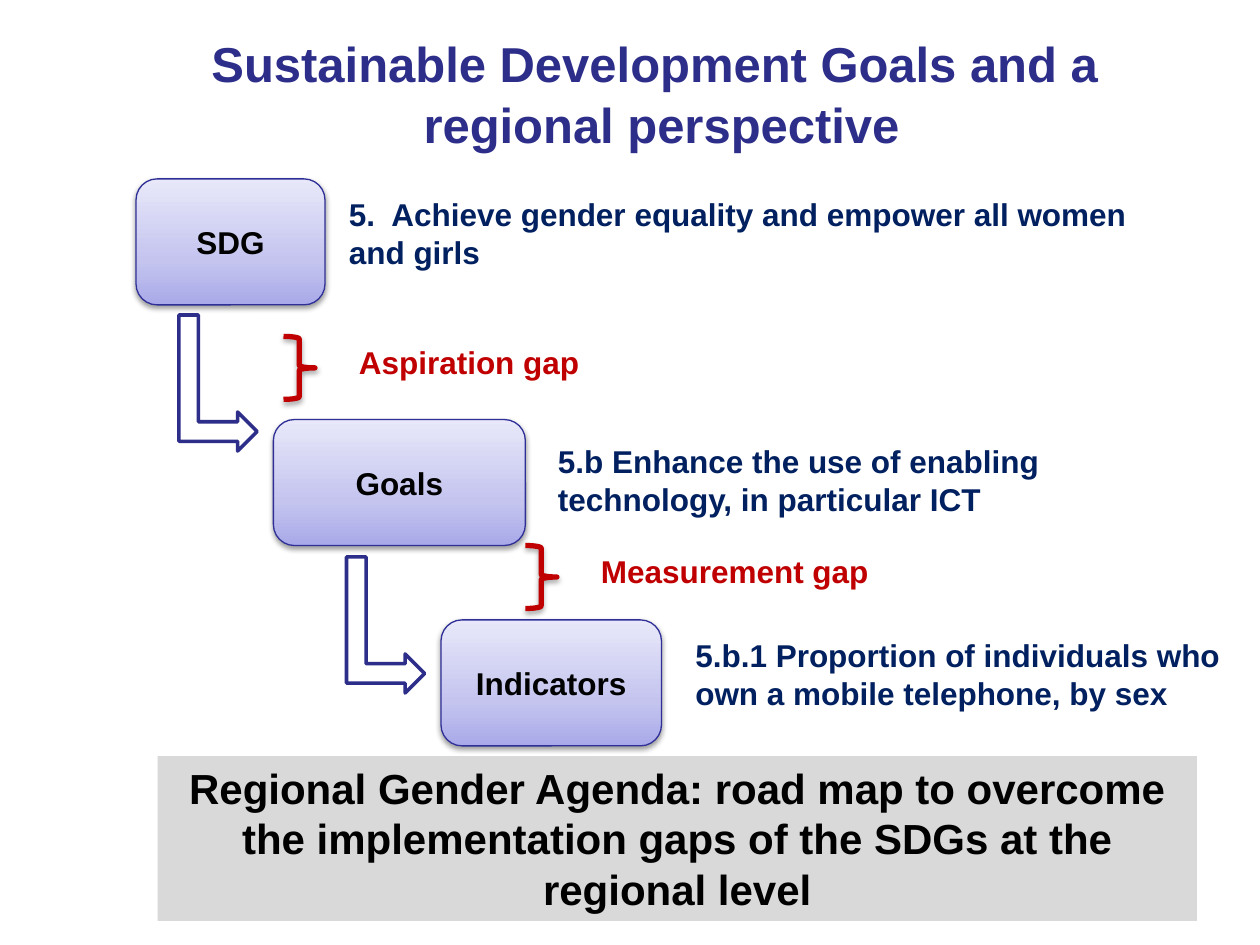
from lxml import etree
from pptx import Presentation
from pptx import util as u
from pptx.dml.color import RGBColor
from pptx.enum import shapes, text
from pptx.oxml import ns

Inches, Pt = u.Inches, u.Pt
SHAPE = shapes.MSO_SHAPE
ALIGN, ANCHOR = text.PP_ALIGN, text.MSO_ANCHOR
INDIGO, NAVY, RED, BLACK = "2D2D8A", "002060", "C00000", "000000"
BOX_STOPS = [(0, "A9A9E9"), (35, "C4C4EF"), (100, "E8E8FA")]


def rgb(value):
    return RGBColor.from_string(value)


def add_xml(parent, xml, before=None):
    """Parse a drawing element and put it before a sibling, or last."""
    head, rest = xml.split(">", 1)
    closed = head.endswith("/")
    head = head.rstrip("/") + ' xmlns:a="%s"' % ns.nsuri("a")
    el = etree.fromstring(head + ("/>" if closed else ">") + rest)
    if before is None:
        parent.append(el)
    else:
        before.addprevious(el)


def write(tf, lines, size, color, align=ALIGN.LEFT, anchor=ANCHOR.TOP):
    tf.word_wrap = True
    tf.vertical_anchor = anchor
    p = tf.paragraphs[0]
    p.alignment = align
    for i, line in enumerate(lines):
        if i:
            p.add_line_break()
        r = p.add_run()
        r.text = line
        r.font.name, r.font.size, r.font.bold = "Arial", Pt(size), True
        r.font.color.rgb = rgb(color)
    return p


def add_shape(slide, kind, box, fill=None, line=None, width=1):
    sp = slide.shapes.add_shape(kind, *map(Inches, box))
    sp.shadow.inherit = False
    if fill:
        sp.fill.solid()
        sp.fill.fore_color.rgb = rgb(fill)
    else:
        sp.fill.background()
    if line:
        sp.line.color.rgb = rgb(line)
        sp.line.width = Pt(width)
    else:
        sp.line.fill.background()
    return sp


def drop_shadow(sp, alpha, distance):
    effects = sp._element.spPr.find(ns.qn("a:effectLst"))
    add_xml(effects, f'<a:outerShdw blurRad="{Pt(3.1)}" dist="{Pt(distance)}" dir="5400000" '
            f'rotWithShape="0"><a:srgbClr val="000000"><a:alpha val="{alpha * 1000}"/>'
            '</a:srgbClr></a:outerShdw>')


def gradient(sp, stops):
    """Upward gradient fill from percent and colour pairs."""
    spPr = sp._element.spPr
    old = spPr.find(ns.qn("a:noFill"))
    gs = "".join(f'<a:gs pos="{pos * 1000}"><a:srgbClr val="{color}"/></a:gs>'
                 for pos, color in stops)
    add_xml(spPr, f'<a:gradFill rotWithShape="1"><a:gsLst>{gs}</a:gsLst>'
            '<a:lin ang="16200000" scaled="0"/></a:gradFill>', before=old)
    spPr.remove(old)


def add_title(slide, box, lines):
    title = slide.shapes.title
    title.left, title.top, title.width, title.height = map(Inches, box)
    title.text_frame.margin_top = Inches(0.07)
    p = write(title.text_frame, lines, 28, INDIGO, ALIGN.CENTER)
    p.line_spacing = 1.05


def add_label(slide, left, top, width, height, words, color):
    tb = slide.shapes.add_textbox(*map(Inches, (left, top, width, height)))
    write(tb.text_frame, [words], 18, color)


def add_level(slide, box, name, note, note_box):
    """Rounded box with its note; the note is placed from the box corner."""
    sp = add_shape(slide, SHAPE.ROUNDED_RECTANGLE, box, line="2F2F98", width=0.75)
    gradient(sp, BOX_STOPS)
    drop_shadow(sp, 38, 1.6)
    write(sp.text_frame, [name], 18, BLACK, ALIGN.CENTER, ANCHOR.MIDDLE)
    dx, dy, width = note_box
    add_label(slide, box[0] + dx, box[1] + dy, width, 0.71, note, NAVY)


def add_step_arrow(slide, left, top):
    arrow = add_shape(slide, SHAPE.BENT_UP_ARROW, (left, top, 1.08, 0.62),
                      "FFFFFF", INDIGO, 2)
    arrow.rotation = 90


def add_gap(slide, left, top, width, words):
    brace = add_shape(slide, SHAPE.RIGHT_BRACE, (left, top, 0.25, 0.5), line=RED, width=3)
    drop_shadow(brace, 35, 1.8)
    add_label(slide, left + 0.5, top, width, 0.4, words, RED)


def add_conclusion(slide, box, words):
    sp = add_shape(slide, SHAPE.RECTANGLE, box, "D9D9D9")
    write(sp.text_frame, [words], 24, BLACK, ALIGN.CENTER)


def main():
    prs = Presentation()
    prs.slide_width, prs.slide_height = Inches(10), Inches(7.5)
    slide = prs.slides.add_slide(prs.slide_layouts[5])

    add_title(slide, (0.75, 0.17, 9, 1.25),
              ["Sustainable Development Goals and a ", "regional perspective"])
    add_conclusion(slide, (1.25, 6, 8.25, 1.31),
                   "Regional Gender Agenda: road map to overcome the implementation "
                   "gaps of the SDGs at the regional level")

    levels = [
        ((1.08, 1.42, 1.5, 1), "SDG",
         "5.  Achieve gender equality and empower all women and girls", (1.59, 0.08, 6.75)),
        ((2.17, 3.33, 2, 1), "Goals",
         "5.b Enhance the use of enabling technology, in particular ICT", (2.16, 0.13, 4.42)),
        ((3.5, 4.92, 1.75, 1), "Indicators",
         "5.b.1 Proportion of individuals who own a mobile telephone, by sex",
         (1.92, 0.08, 4.42)),
    ]
    for level in levels:
        add_level(slide, *level)
    for left, top in [(1.19, 2.73), (2.52, 4.65)]:
        add_step_arrow(slide, left, top)
    add_gap(slide, 2.25, 2.67, 2.67, "Aspiration gap")
    add_gap(slide, 4.17, 4.33, 3.75, "Measurement gap")

    prs.save("out.pptx")


if __name__ == "__main__":
    main()
